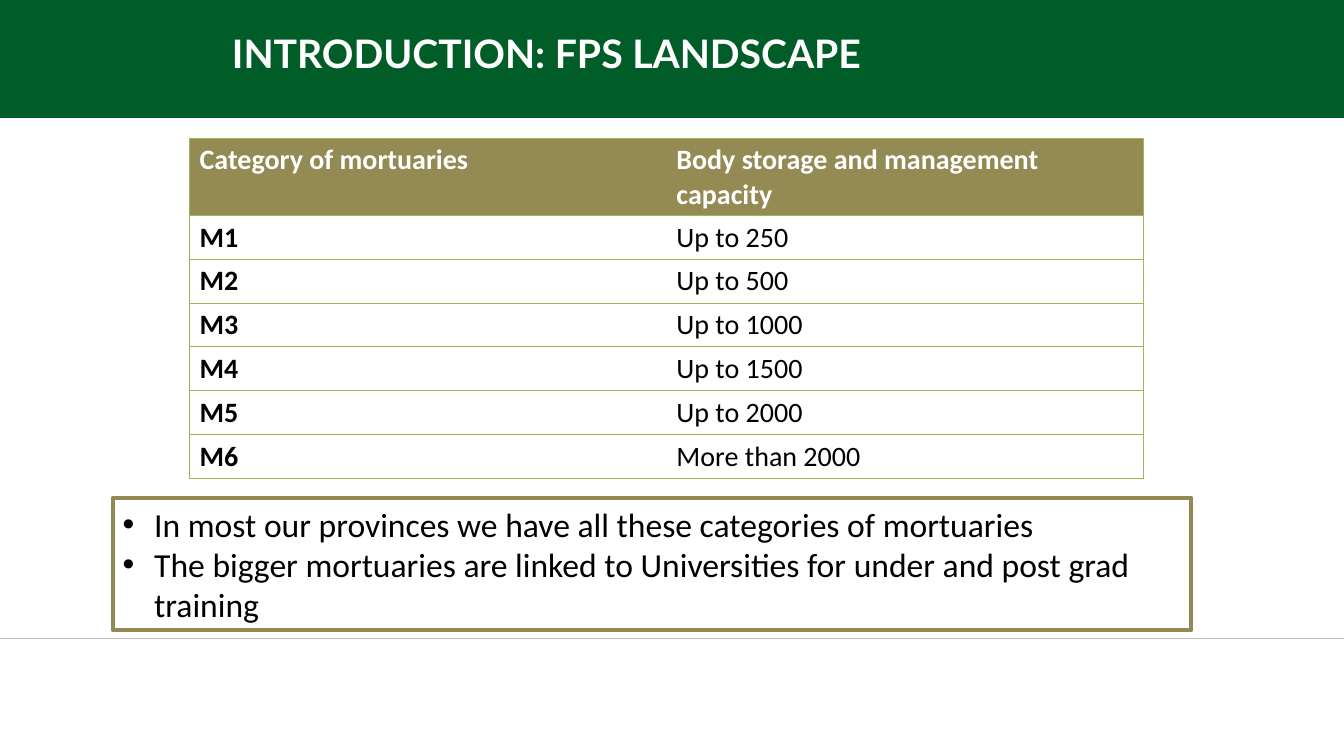
from dataclasses import dataclass

from lxml.etree import SubElement
from pptx import Presentation
from pptx.dml.color import RGBColor
from pptx.enum.shapes import MSO_CONNECTOR as CONN, MSO_SHAPE as SHAPE
from pptx.enum.text import MSO_ANCHOR as ANCHOR, PP_ALIGN as ALIGN
from pptx.oxml.ns import qn
from pptx.util import Pt


@dataclass(frozen=True)
class Theme:
    green: str = "005D28"
    olive: str = "948A54"
    grid: str = "98B955"
    rule: str = "BFBFBF"
    white: str = "FFFFFF"
    black: str = "000000"
    heading_font: str = "Lato"
    body_font: str = "Calibri"
    title_size: int = 28
    bullet_size: int = 24
    table_size: int = 20


THEME = Theme()
WIDTH, HEIGHT = 960, 540
MORTUARIES = [
    ("Category of mortuaries", "Body storage and management capacity"),
    ("M1", "Up to 250"),
    ("M2", "Up to 500"),
    ("M3", "Up to 1000"),
    ("M4", "Up to 1500"),
    ("M5", "Up to 2000"),
    ("M6", "More than 2000"),
]
NOTES = [
    "In most our provinces we have all these categories of mortuaries",
    "The bigger mortuaries are linked to Universities for under and post grad training",
]


def rgb(value):
    return RGBColor.from_string(value)


def write(p, text, *, size, color=THEME.black, font=THEME.body_font,
          bold=False, align=ALIGN.LEFT):
    p.alignment = align
    r = p.add_run()
    r.text = text
    r.font.name = font
    r.font.size = Pt(size)
    r.font.bold = bold
    r.font.color.rgb = rgb(color)


def add_bullet(p, indent):
    pPr = p._p.get_or_add_pPr()
    pPr.set("marL", str(Pt(indent)))
    pPr.set("indent", str(-Pt(indent)))
    SubElement(pPr, qn("a:buFont"), typeface="Arial")
    SubElement(pPr, qn("a:buChar"), char="•")


def add_box(slide, x, y, w, h, *, fill=None, line=None, weight=0):
    sp = slide.shapes.add_shape(SHAPE.RECTANGLE, Pt(x), Pt(y), Pt(w), Pt(h))
    sp.shadow.inherit = False
    if fill:
        sp.fill.solid()
        sp.fill.fore_color.rgb = rgb(fill)
    else:
        sp.fill.background()
    if line:
        sp.line.color.rgb = rgb(line)
        sp.line.width = Pt(weight)
    else:
        sp.line.fill.background()
    return sp


def add_rule(slide, y):
    line = slide.shapes.add_connector(CONN.STRAIGHT, 0, Pt(y), Pt(WIDTH), Pt(y))
    line.line.color.rgb = rgb(THEME.rule)
    line.line.width = Pt(0.75)
    SubElement(line._element.spPr, qn("a:effectLst"))


def add_title(slide, text):
    sp = slide.shapes.add_textbox(Pt(135.4), Pt(17.3), Pt(509.8), Pt(49.7))
    tf = sp.text_frame
    tf.word_wrap = True
    write(tf.paragraphs[0], text, size=THEME.title_size, color=THEME.white,
          font=THEME.heading_font, bold=True, align=ALIGN.CENTER)


def add_notes_box(slide, notes):
    sp = add_box(slide, 80.6, 355.7, 770.4, 94.3, line=THEME.olive, weight=3)
    tf = sp.text_frame
    tf.word_wrap = True
    tf.vertical_anchor = ANCHOR.MIDDLE
    for i, note in enumerate(notes):
        p = tf.add_paragraph() if i else tf.paragraphs[0]
        add_bullet(p, 22.5)
        write(p, note, size=THEME.bullet_size)


def set_borders(cell, visible):
    tcPr = cell._tc.get_or_add_tcPr()
    for side in "LRTB":
        ln = SubElement(tcPr, qn(f"a:ln{side}"), w=str(Pt(0.75)))
        if side in visible:
            fill = SubElement(ln, qn("a:solidFill"))
            SubElement(fill, qn("a:srgbClr"), val=THEME.grid)
        else:
            SubElement(ln, qn("a:noFill"))


def add_mortuary_table(slide, rows):
    header_h, row_h, col_w = 55, 31.3, 340.6
    height = header_h + row_h * (len(rows) - 1)
    frame = slide.shapes.add_table(len(rows), 2, Pt(135.4), Pt(98.6),
                                   Pt(2 * col_w), Pt(height))
    table = frame.table
    table.first_row = table.horz_banding = False
    for i, row in enumerate(rows):
        header = i == 0
        table.rows[i].height = Pt(header_h if header else row_h)
        for j, text in enumerate(row):
            cell = table.cell(i, j)
            set_borders(cell, "TB" + "LR"[j])
            if header:
                cell.fill.solid()
                cell.fill.fore_color.rgb = rgb(THEME.olive)
            else:
                cell.fill.background()
            write(cell.text_frame.paragraphs[0], text, size=THEME.table_size,
                  color=THEME.white if header else THEME.black,
                  bold=header or j == 0)


def main():
    prs = Presentation()
    prs.slide_width, prs.slide_height = Pt(WIDTH), Pt(HEIGHT)
    s = prs.slides.add_slide(prs.slide_layouts[6])
    add_box(s, 0, 0, WIDTH, 84.2, fill=THEME.green)
    add_rule(s, 456)
    add_title(s, "INTRODUCTION: FPS LANDSCAPE")
    add_notes_box(s, NOTES)
    add_mortuary_table(s, MORTUARIES)
    prs.save("out.pptx")


if __name__ == "__main__":
    main()
